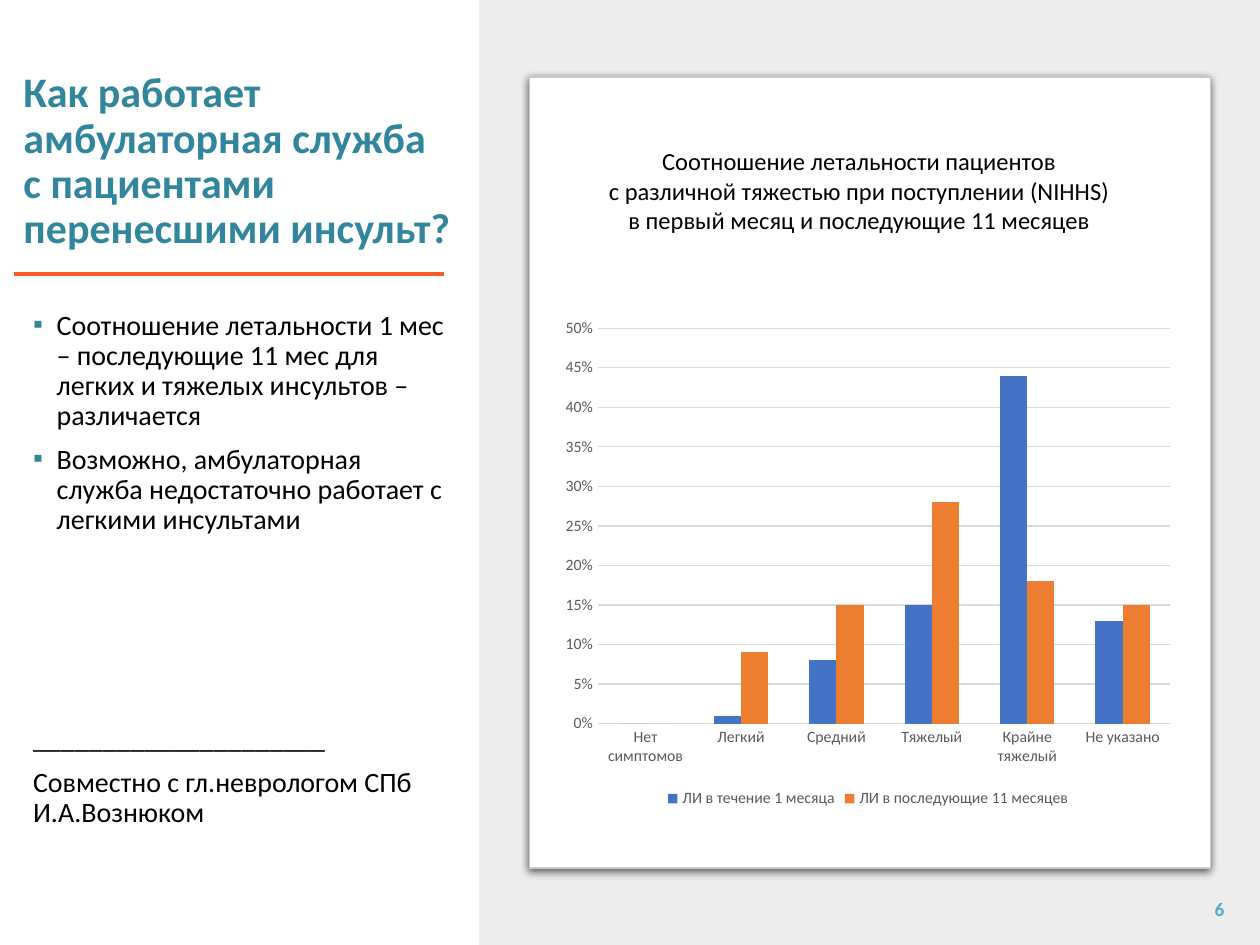
from lxml import etree
from pptx import Presentation
from pptx.chart.data import CategoryChartData
from pptx.dml.color import RGBColor
from pptx.enum.chart import XL_CHART_TYPE, XL_LEGEND_POSITION, XL_TICK_MARK
from pptx.enum.shapes import MSO_CONNECTOR, MSO_SHAPE
from pptx.enum.text import MSO_ANCHOR, MSO_AUTO_SIZE, PP_ALIGN
from pptx.oxml import parse_xml
from pptx.oxml.ns import nsdecls, qn
from pptx.util import Pt

LEFT, CENTER, RIGHT = PP_ALIGN.LEFT, PP_ALIGN.CENTER, PP_ALIGN.RIGHT
TOP, MIDDLE = MSO_ANCHOR.TOP, MSO_ANCHOR.MIDDLE
NO_TICK = XL_TICK_MARK.NONE
TEAL = RGBColor(0x31, 0x85, 0x9C)
LIGHT_TEAL = RGBColor(0x50, 0xAE, 0xC8)
ORANGE_RED = RGBColor(0xF8, 0x5A, 0x24)
BLACK = RGBColor(0, 0, 0)
WHITE = RGBColor(0xFF, 0xFF, 0xFF)
PANEL = RGBColor(0xED, 0xED, 0xED)
CARD_LINE = RGBColor(0xC8, 0xCA, 0xCA)
GRID = RGBColor(0xD9, 0xD9, 0xD9)
LABEL = RGBColor(0x59, 0x59, 0x59)
BLUE = RGBColor(0x44, 0x72, 0xC4)
ORANGE = RGBColor(0xED, 0x7D, 0x31)
FONT = "Calibri"


def set_font(font, size, color, bold=False):
    font.name = FONT
    font.size = Pt(size)
    font.bold = bold
    font.color.rgb = color


def set_text(s, text, size, color, align, anchor, bold=False):
    tf = s.text_frame
    tf.text = text
    tf.word_wrap = True
    tf.auto_size = MSO_AUTO_SIZE.NONE
    tf.vertical_anchor = anchor
    tf.margin_left = tf.margin_right = Pt(5.4)
    tf.margin_top = tf.margin_bottom = Pt(2.7)
    for p in tf.paragraphs:
        p.alignment = align
        for r in p.runs:
            set_font(r.font, size, color, bold)
    return tf


prs = Presentation()
prs.slide_width, prs.slide_height = Pt(720), Pt(540)
slide = prs.slides.add_slide(prs.slide_layouts[1])
shapes = slide.shapes

title = shapes.title
title.left, title.top, title.width, title.height = Pt(8), Pt(29), Pt(265.5), Pt(127.5)
tf = set_text(title, "Как работает амбулаторная служба\vс пациентами перенесшими инсульт?",
              24, TEAL, LEFT, MIDDLE, True)
tf.paragraphs[0].line_spacing = 0.9

body = slide.placeholders[1]
body.left, body.top, body.width, body.height = Pt(13.5), Pt(175), Pt(248.5), Pt(305)
paragraphs = [
    ("Соотношение летальности 1 мес – последующие 11 мес для легких и тяжелых инсультов – различается", 0, True),
    ("Возможно, амбулаторная служба недостаточно работает с легкими инсультами", 7.5, True),
    ("_____________________", 108, False),
    ("Совместно с гл.неврологом СПб И.А.Вознюком", 7.5, False),
]
tf = set_text(body, "\n".join(text for text, _, _ in paragraphs), 16, BLACK, LEFT, TOP)
for p, (_, space, bulleted) in zip(tf.paragraphs, paragraphs):
    p.line_spacing = 0.9
    p.space_before = Pt(space)
    pPr = p._p.get_or_add_pPr()
    indent = Pt(13.5) if bulleted else 0
    pPr.set("marL", str(indent))
    pPr.set("indent", str(-indent))
    if bulleted:
        color = etree.SubElement(pPr, qn("a:buClr"))
        etree.SubElement(color, qn("a:srgbClr"), val=str(TEAL))
        etree.SubElement(pPr, qn("a:buFont"), typeface="Arial")
        etree.SubElement(pPr, qn("a:buChar"), char="▪")
    else:
        etree.SubElement(pPr, qn("a:buNone"))

panel = shapes.add_shape(MSO_SHAPE.RECTANGLE, Pt(274), 0, Pt(446), Pt(540))
panel.shadow.inherit = False
panel.fill.solid()
panel.fill.fore_color.rgb = PANEL
panel.line.fill.background()

card = shapes.add_shape(MSO_SHAPE.ROUNDED_RECTANGLE, Pt(302.5), Pt(44), Pt(389), Pt(452))
card.adjustments[0] = 0
card.fill.solid()
card.fill.fore_color.rgb = WHITE
card.line.color.rgb = CARD_LINE
card.line.width = Pt(0.75)
card.shadow.inherit = False
effects = card._element.spPr.find(qn("a:effectLst"))
effects.append(parse_xml(
    f'<a:outerShdw {nsdecls("a")} blurRad="{Pt(4.5)}" dist="{Pt(1.5)}" dir="5400000" '
    'algn="t" rotWithShape="0"><a:srgbClr val="000000"><a:alpha val="63000"/>'
    '</a:srgbClr></a:outerShdw>'))

number = shapes.add_textbox(Pt(543), Pt(505), Pt(162), Pt(28.75))
set_text(number, "6", 11, LIGHT_TEAL, RIGHT, MIDDLE, True)

rule = shapes.add_connector(MSO_CONNECTOR.STRAIGHT, Pt(8), Pt(156.75), Pt(253.5), Pt(156.75))
rule.line.color.rgb = ORANGE_RED
rule.line.width = Pt(2.25)
etree.SubElement(rule._element.spPr, qn("a:effectLst"))

heading = shapes.add_textbox(Pt(339), Pt(80), Pt(304), Pt(58))
set_text(heading, "Соотношение летальности пациентов\n"
         "с различной тяжестью при поступлении (NIHHS)\n"
         "в первый месяц и последующие 11 месяцев", 14, BLACK, CENTER, TOP)
heading.text_frame.margin_top = Pt(3.6)

data = CategoryChartData(number_format="0%")
data.categories = ["Нет симптомов", "Легкий", "Средний", "Тяжелый", "Крайне тяжелый", "Не указано"]
data.add_series("ЛИ в течение 1 месяца", (0, 0.01, 0.08, 0.15, 0.44, 0.13))
data.add_series("ЛИ в последующие 11 месяцев", (0, 0.09, 0.15, 0.28, 0.18, 0.15))
chart = shapes.add_chart(XL_CHART_TYPE.COLUMN_CLUSTERED, Pt(316), Pt(176.5),
                         Pt(360), Pt(288), data).chart
set_font(chart.font, 10, BLACK)
chart.has_title = False
chart.has_legend = True
chart.legend.position = XL_LEGEND_POSITION.BOTTOM
chart.legend.include_in_layout = False
set_font(chart.legend.font, 9, LABEL)

plot = chart.plots[0]
plot.gap_width = 150
plot.overlap = 0
plot.vary_by_categories = False
for series, color in zip(plot.series, (BLUE, ORANGE)):
    series.format.fill.solid()
    series.format.fill.fore_color.rgb = color

categories, values = chart.category_axis, chart.value_axis
for axis in (categories, values):
    axis.major_tick_mark = axis.minor_tick_mark = NO_TICK
    set_font(axis.tick_labels.font, 9, LABEL)
values.minimum_scale, values.maximum_scale, values.major_unit = 0, 0.5, 0.05
values.tick_labels.number_format = "0%"
values.tick_labels.number_format_is_linked = False
values.format.line.fill.background()
for line in (categories.format.line, values.major_gridlines.format.line):
    line.color.rgb = GRID
    line.width = Pt(0.75)

prs.save("out.pptx")
